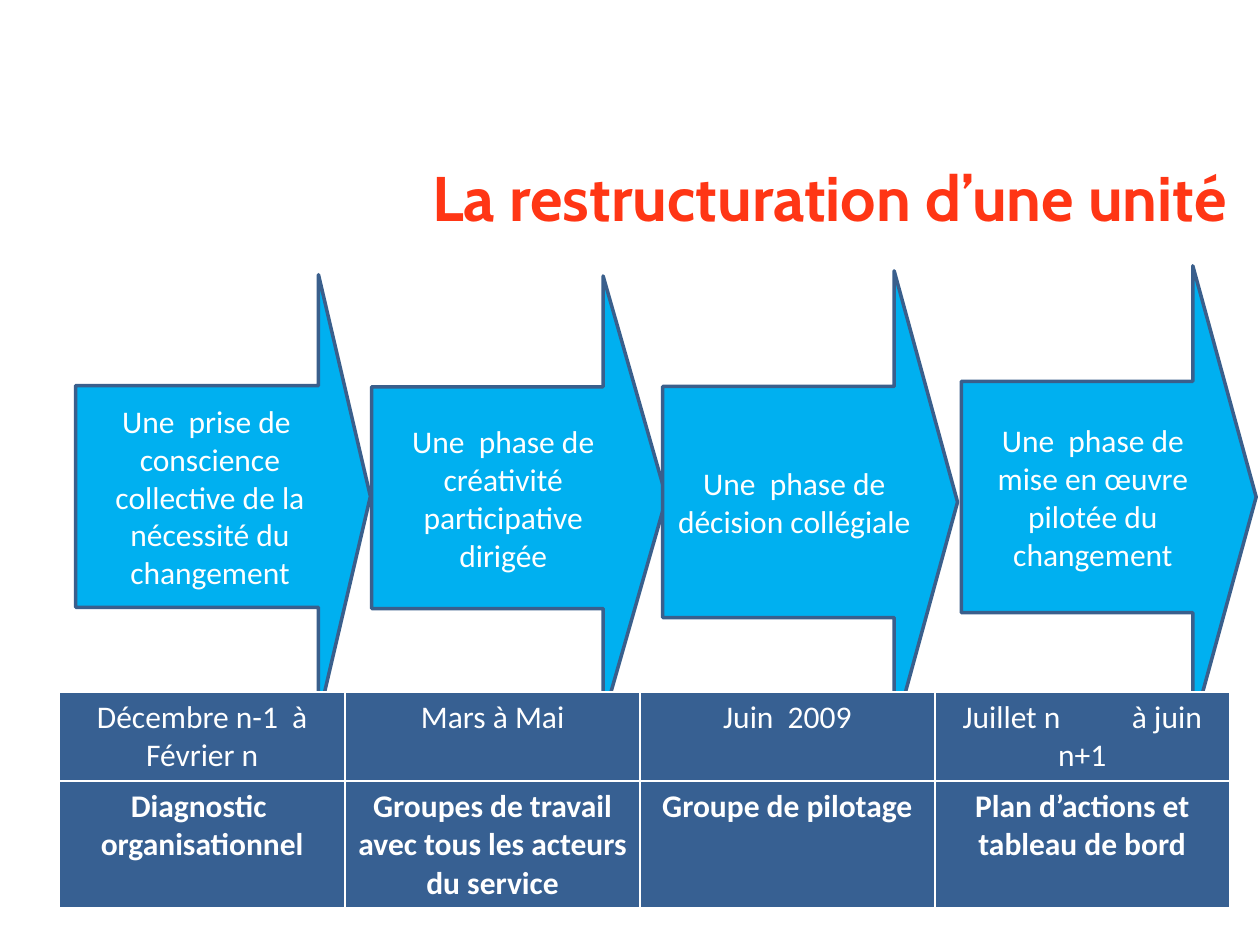
from dataclasses import dataclass

from lxml.etree import SubElement
from pptx import Presentation
from pptx.dml.color import RGBColor
from pptx.enum.shapes import MSO_SHAPE as Shape
from pptx.enum.text import MSO_ANCHOR as Anchor, PP_ALIGN as Align
from pptx.oxml.ns import qn
from pptx.util import Inches, Pt

RED = RGBColor(0xFF, 0x36, 0x15)
SKY = RGBColor(0x00, 0xB0, 0xF0)
OUTLINE = RGBColor(0x3A, 0x5F, 0x8C)
NAVY = RGBColor(0x37, 0x60, 0x92)
WHITE = RGBColor(0xFF, 0xFF, 0xFF)

ARROW_WIDTH = 2.34
COLUMN_WIDTHS = (2.27, 2.34, 2.34, 2.34)
ROW_HEIGHTS = (0.71, 1.0)
WIDE_GAP = "\t"
WIDE_GAP_SPACING = "3660"


@dataclass
class Phase:
    left: float
    top: float
    height: float
    head: float
    label: str
    period: str
    action: str


PHASES = [
    Phase(0.6, 2.18, 3.52, 0.176,
          "Une  prise de  conscience collective de la nécessité du changement",
          "Décembre n-1  à Février n", "Diagnostic  organisationnel"),
    Phase(2.95, 2.19, 3.52, 0.215,
          "Une  phase de créativité participative dirigée",
          "Mars à Mai", "Groupes de travail avec tous les acteurs du service"),
    Phase(5.26, 2.15, 3.67, 0.215,
          "Une  phase de décision collégiale",
          "Juin  2009", "Groupe de pilotage"),
    Phase(7.63, 2.11, 3.67, 0.215,
          "Une  phase de mise en œuvre pilotée du changement",
          f"Juillet n{WIDE_GAP}à juin n+1", "Plan d’actions et tableau de bord"),
]


def write(frame, text: str, *, size: float = 18, font: str = "Calibri",
          color: RGBColor = WHITE, bold: bool = False, align=Align.CENTER) -> None:
    frame.word_wrap = True
    para = frame.paragraphs[0]
    para.alignment = align
    before, gap, after = text.partition(WIDE_GAP)
    for part in filter(None, (before, gap, after)):
        span = para.add_run()
        span.text = " " if part == WIDE_GAP else part
        span.font.size = Pt(size)
        span.font.name = font
        span.font.bold = bold
        span.font.color.rgb = color
        if part == WIDE_GAP:
            span.font._element.set("spc", WIDE_GAP_SPACING)


def draw_title(page, text: str) -> None:
    box = page.shapes.add_textbox(Inches(0.77), Inches(1.21), Inches(9.18), Inches(0.71))
    write(box.text_frame, text, size=36, font="Cabin", color=RED, bold=True,
          align=Align.RIGHT)


def draw_arrow(page, phase: Phase) -> None:
    arrow = page.shapes.add_shape(Shape.RIGHT_ARROW, Inches(phase.left), Inches(phase.top),
                                  Inches(ARROW_WIDTH), Inches(phase.height))
    arrow.shadow.inherit = False
    arrow.adjustments[0] = 0.5
    arrow.adjustments[1] = phase.head
    arrow.fill.solid()
    arrow.fill.fore_color.rgb = SKY
    arrow.line.color.rgb = OUTLINE
    arrow.line.width = Pt(2)
    arrow.text_frame.vertical_anchor = Anchor.MIDDLE
    write(arrow.text_frame, phase.label)


def add_borders(cell, color: RGBColor, width: float) -> None:
    properties = cell._tc.get_or_add_tcPr()
    for index, side in enumerate(("lnL", "lnR", "lnT", "lnB")):
        line = properties.makeelement(qn(f"a:{side}"), {"w": str(Pt(width))})
        properties.insert(index, line)
        fill = SubElement(line, qn("a:solidFill"))
        SubElement(fill, qn("a:srgbClr"), val=str(color))


def draw_schedule(page, phases: list[Phase]) -> None:
    table = page.shapes.add_table(
        len(ROW_HEIGHTS), len(phases), Inches(0.47), Inches(5.49),
        Inches(sum(COLUMN_WIDTHS)), Inches(sum(ROW_HEIGHTS))).table
    table.first_row = False
    table.horz_banding = False
    for column, width in zip(table.columns, COLUMN_WIDTHS):
        column.width = Inches(width)
    for row, height in zip(table.rows, ROW_HEIGHTS):
        row.height = Inches(height)
    for column, phase in enumerate(phases):
        for row, text in enumerate((phase.period, phase.action)):
            cell = table.cell(row, column)
            cell.fill.solid()
            cell.fill.fore_color.rgb = NAVY
            add_borders(cell, WHITE, 1)
            write(cell.text_frame, text, bold=row == 1)


def main() -> None:
    deck = Presentation()
    deck.slide_width, deck.slide_height = Inches(10), Inches(7.5)
    page = deck.slides.add_slide(deck.slide_layouts[6])
    draw_title(page, "La restructuration d’une unité ")
    first, *others = PHASES
    for phase in (*others, first):
        draw_arrow(page, phase)
    draw_schedule(page, PHASES)
    deck.save("out.pptx")


if __name__ == "__main__":
    main()
